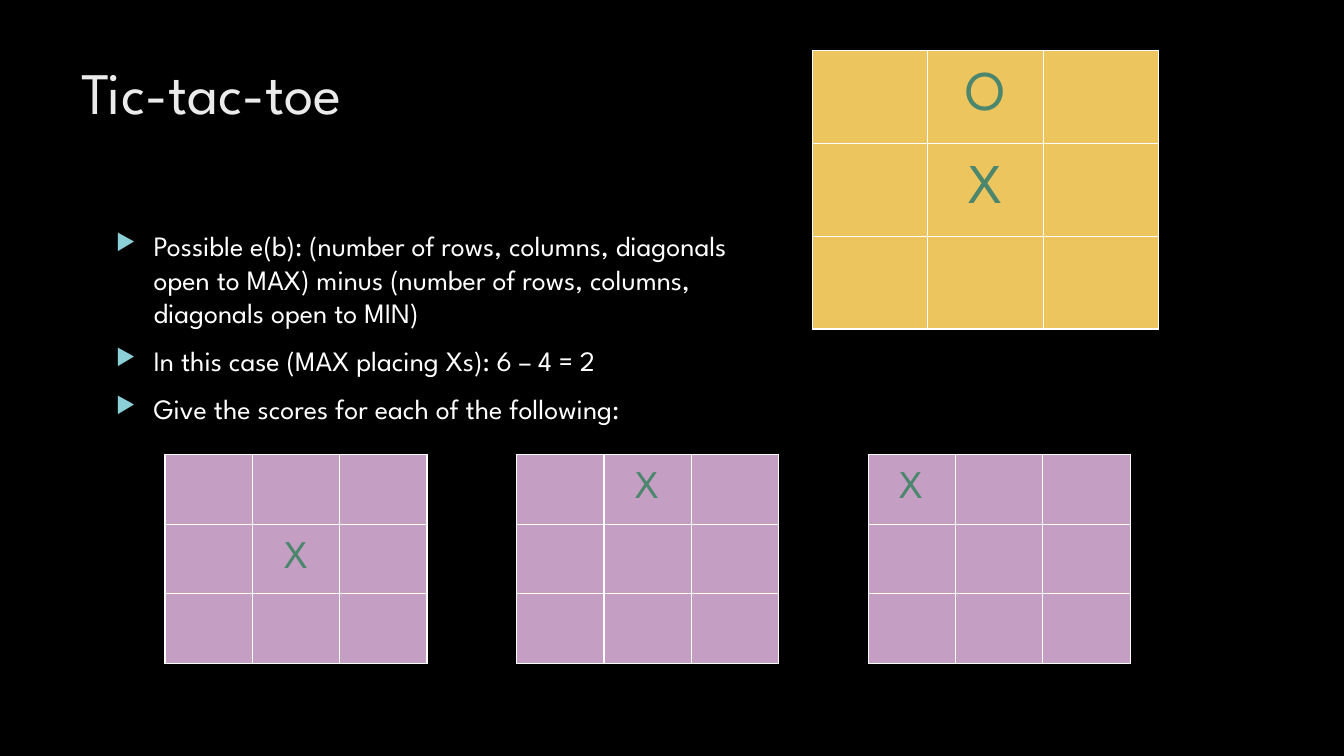
from dataclasses import dataclass

from lxml.etree import SubElement
from pptx import Presentation
from pptx.dml.color import RGBColor
from pptx.enum.text import MSO_ANCHOR, PP_ALIGN
from pptx.oxml.ns import qn
from pptx.util import Cm, Pt


@dataclass(frozen=True)
class Theme:
    """Colours, font and type sizes of the slide."""
    font: str = "League Spartan"
    back: str = "000000"
    title: str = "EBEBEB"
    body: str = "FFFFFF"
    bullet: str = "8AD0D6"
    mark: str = "4B866D"
    gold: str = "ECC55F"
    pink: str = "C59EC3"
    rule: str = "FFFFFF"
    head: int = 42
    text: int = 20
    large: int = 40
    small: int = 28


def apply(target, values):
    """Set each named format value on the target."""
    for name, value in values.items():
        setattr(target, name, value)


class Canvas:
    """Holds the theme and the current slide."""

    def __init__(self, deck, theme):
        """Add a blank slide with the theme's background."""
        self.theme = theme
        self.slide = deck.slides.add_slide(deck.slide_layouts[6])
        self.paint(self.slide.background.fill, theme.back)

    def paint(self, fill, color):
        """Make a fill solid in the given colour."""
        fill.solid()
        fill.fore_color.rgb = RGBColor.from_string(color)

    def label(self, para, text, size, color):
        """Add a styled run to a paragraph."""
        run = para.add_run()
        run.text = text
        apply(run.font, {"name": self.theme.font, "size": Pt(size)})
        run.font.color.rgb = RGBColor.from_string(color)

    def frame(self, left, top, width, height):
        """Add a wrapped text box and return its frame."""
        box = self.slide.shapes.add_textbox(Cm(left), Cm(top), Cm(width), Cm(height))
        apply(box.text_frame, {"word_wrap": True, "vertical_anchor": MSO_ANCHOR.TOP})
        return box.text_frame

    def title(self, text, *place):
        """Add the slide title."""
        para = self.frame(*place).paragraphs[0]
        self.label(para, text, self.theme.head, self.theme.title)

    def bullets(self, items, *place):
        """Add a bulleted list."""
        frame = self.frame(*place)
        for index, item in enumerate(items):
            para = frame.add_paragraph() if index else frame.paragraphs[0]
            props = para._p.get_or_add_pPr()
            props.set("marL", str(Cm(0.95)))
            props.set("indent", str(-Cm(0.95)))
            tint = SubElement(props, qn("a:buClr"))
            SubElement(tint, qn("a:srgbClr"), val=self.theme.bullet)
            SubElement(props, qn("a:buSzPct"), val="80000")
            SubElement(props, qn("a:buChar"), char="▶")
            para.space_before = Pt(10 if index else 0)
            self.label(para, item, self.theme.text, self.theme.body)

    def border(self, cell):
        """Rule all four sides of a cell."""
        props = cell._tc.get_or_add_tcPr()
        for index, side in enumerate(("lnL", "lnR", "lnT", "lnB")):
            line = props.makeelement(qn("a:" + side), {"w": str(Pt(1))})
            fill = SubElement(line, qn("a:solidFill"))
            SubElement(fill, qn("a:srgbClr"), val=self.theme.rule)
            props.insert(index, line)

    def board(self, marks, left, top, wide, high, size, color):
        """Add a three by three board with marks keyed by row and column."""
        shape = self.slide.shapes.add_table(
            3, 3, Cm(left), Cm(top), Cm(3 * wide), Cm(3 * high))
        table = shape.table
        apply(table, {"first_row": False, "horz_banding": False})
        for index in range(3):
            table.columns[index].width = Cm(wide)
            table.rows[index].height = Cm(high)
        for index, cell in enumerate(table.iter_cells()):
            self.paint(cell.fill, color)
            self.border(cell)
            mark = marks.get(divmod(index, 3))
            if mark:
                cell.vertical_anchor = MSO_ANCHOR.MIDDLE
                para = cell.text_frame.paragraphs[0]
                para.alignment = PP_ALIGN.CENTER
                self.label(para, mark, size, self.theme.mark)


def main():
    """Build and save the slide."""
    deck = Presentation()
    apply(deck, {"slide_width": Cm(33.87), "slide_height": Cm(19.05)})
    theme = Theme()
    page = Canvas(deck, theme)
    page.title("Tic-tac-toe", 1.8, 1.27, 18, 3.89)
    page.bullets([
        "Possible e(b): (number of rows, columns, diagonals open to MAX) "
        "minus (number of rows, columns, diagonals open to MIN)",
        "In this case (MAX placing Xs): 6 – 4 = 2",
        "Give the scores for each of the following:",
    ], 2.67, 5.64, 16.66, 11.66)
    page.board({(0, 1): "O", (1, 1): "X"},
               20.47, 1.27, 2.91, 2.34, theme.large, theme.gold)
    for index, spot in enumerate([(1, 1), (0, 1), (0, 0)]):
        page.board({spot: "X"}, 4.16 + 8.86 * index, 11.46,
                   2.2, 1.75, theme.small, theme.pink)
    deck.save("out.pptx")


if __name__ == "__main__":
    main()
